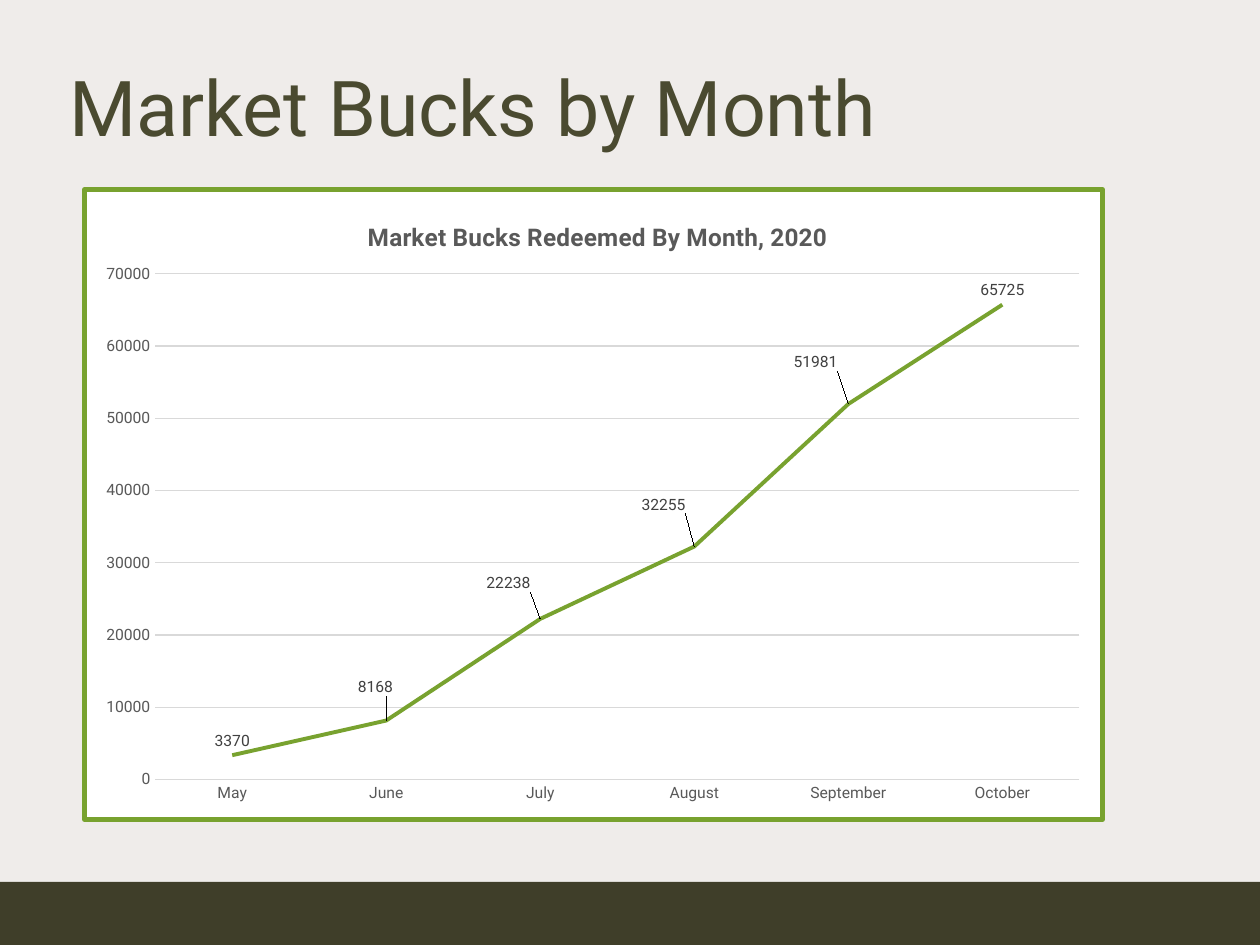
from lxml.etree import SubElement
from pptx import Presentation
from pptx.chart.data import CategoryChartData
from pptx.dml.color import RGBColor
from pptx.enum.chart import XL_CHART_TYPE, XL_LABEL_POSITION, XL_TICK_MARK
from pptx.enum.shapes import MSO_SHAPE
from pptx.enum.text import MSO_ANCHOR, PP_ALIGN
from pptx.oxml import parse_xml
from pptx.oxml.ns import nsdecls, qn
from pptx.util import Pt

TITLE = "Market Bucks by Month"
HEAD = "Market Bucks Redeemed By Month, 2020"
DATA = [("May", 3370), ("June", 8168), ("July", 22238),
        ("August", 32255), ("September", 51981), ("October", 65725)]
SHIFTS = {1: (-11, -19), 2: (-32, -22), 3: (-31, -28), 4: (-33, -28)}

COLORS = {"back": "EFECEA", "band": "3F3E29", "title": "4A4A30",
          "green": "78A22F", "white": "FFFFFF", "grid": "D9D9D9",
          "axis": "595959", "label": "404040"}
FONT = "Roboto"
SLIDE = (1260, 945)
BAND = (0, 882, 1260, 63)
NAME = (57, 50, 863, 106)
CHART = (82, 187, 1023, 635)
PLOT = (71, 85, 929, 510)
HEAD_AT = (280, 26)


def px(n):
    return round(n * 914400 / 126)


def rgb(key):
    return RGBColor.from_string(COLORS[key])


def style(font, size, color, bold=False):
    font.name = FONT
    font.size = Pt(size)
    font.bold = bold
    font.color.rgb = rgb(color)


def write(frame, text, size, color, bold=False, align=PP_ALIGN.LEFT):
    para = frame.paragraphs[0]
    para.alignment = align
    run = para.add_run()
    run.text = text
    style(run.font, size, color, bold)


def place(parent, index, spot, modes):
    for old in parent.findall(qn("c:layout")):
        parent.remove(old)
    layout = parse_xml(f"<c:layout {nsdecls('c')}/>")
    manual = SubElement(layout, qn("c:manualLayout"))
    fracs = [n / CHART[2 + i % 2] for i, n in enumerate(spot)]
    for tag, val in modes + list(zip("xywh", fracs)):
        SubElement(manual, qn("c:" + tag)).set("val", str(val))
    parent.insert(index, layout)


def frame_chart(space):
    space.find(qn("c:chart")).addnext(parse_xml(
        f"<c:spPr {nsdecls('c', 'a')}>"
        f'<a:solidFill><a:srgbClr val="{COLORS["white"]}"/></a:solidFill>'
        f'<a:ln w="{Pt(3)}"><a:solidFill><a:srgbClr val="{COLORS["green"]}"/>'
        "</a:solidFill><a:round/></a:ln></c:spPr>"))


def set_axis(axis):
    axis.major_tick_mark = axis.minor_tick_mark = XL_TICK_MARK.NONE
    style(axis.tick_labels.font, 9, "axis")


def thin(line):
    line.color.rgb = rgb("grid")
    line.width = Pt(0.75)


def add_chart(slide):
    data = CategoryChartData()
    data.categories = [month for month, _ in DATA]
    data.add_series("Series 1", [val for _, val in DATA])
    chart = slide.shapes.add_chart(
        XL_CHART_TYPE.LINE, *map(px, CHART), data).chart
    style(chart.font, 10, "axis")
    chart.has_legend = False
    chart.has_title = True
    write(chart.chart_title.text_frame, HEAD, 14, "axis",
          bold=True, align=PP_ALIGN.CENTER)
    chart.chart_title.include_in_layout = False

    months, values = chart.category_axis, chart.value_axis
    set_axis(months)
    set_axis(values)
    thin(months.format.line)
    values.format.line.fill.background()
    thin(values.major_gridlines.format.line)
    values.minimum_scale, values.maximum_scale = 0, 70000
    values.major_unit = 10000

    plot = chart.plots[0]
    plot.vary_by_categories = False
    series = plot.series[0]
    series.smooth = False
    series.format.line.color.rgb = rgb("green")
    series.format.line.width = Pt(2.25)
    labels = series.data_labels
    labels.show_value = True
    labels.position = XL_LABEL_POSITION.ABOVE
    style(labels.font, 9, "label")
    for i in SHIFTS:
        label = series.points[i].data_label
        style(label.font, 9, "label")
        label.position = XL_LABEL_POSITION.ABOVE

    space = chart.element
    edge = [("xMode", "edge"), ("yMode", "edge")]
    for node, shift in zip(space.iter(qn("c:dLbl")), SHIFTS.values()):
        place(node, 1, shift, [])
    place(next(space.iter(qn("c:title"))), 1, HEAD_AT, edge)
    place(next(space.iter(qn("c:plotArea"))), 0, PLOT,
          [("layoutTarget", "inner")] + edge)
    frame_chart(space)


def main():
    deck = Presentation()
    deck.slide_width, deck.slide_height = map(px, SLIDE)
    slide = deck.slides.add_slide(deck.slide_layouts[5])
    slide.background.fill.solid()
    slide.background.fill.fore_color.rgb = rgb("back")

    band = slide.shapes.add_shape(MSO_SHAPE.RECTANGLE, *map(px, BAND))
    band.shadow.inherit = False
    band.fill.solid()
    band.fill.fore_color.rgb = rgb("band")
    band.line.fill.background()

    title = slide.shapes.title
    title.left, title.top, title.width, title.height = map(px, NAME)
    frame = title.text_frame
    frame.word_wrap = False
    frame.vertical_anchor = MSO_ANCHOR.BOTTOM
    frame.margin_bottom = px(4)
    write(frame, TITLE, 44, "title")

    add_chart(slide)
    deck.save("out.pptx")


if __name__ == "__main__":
    main()
